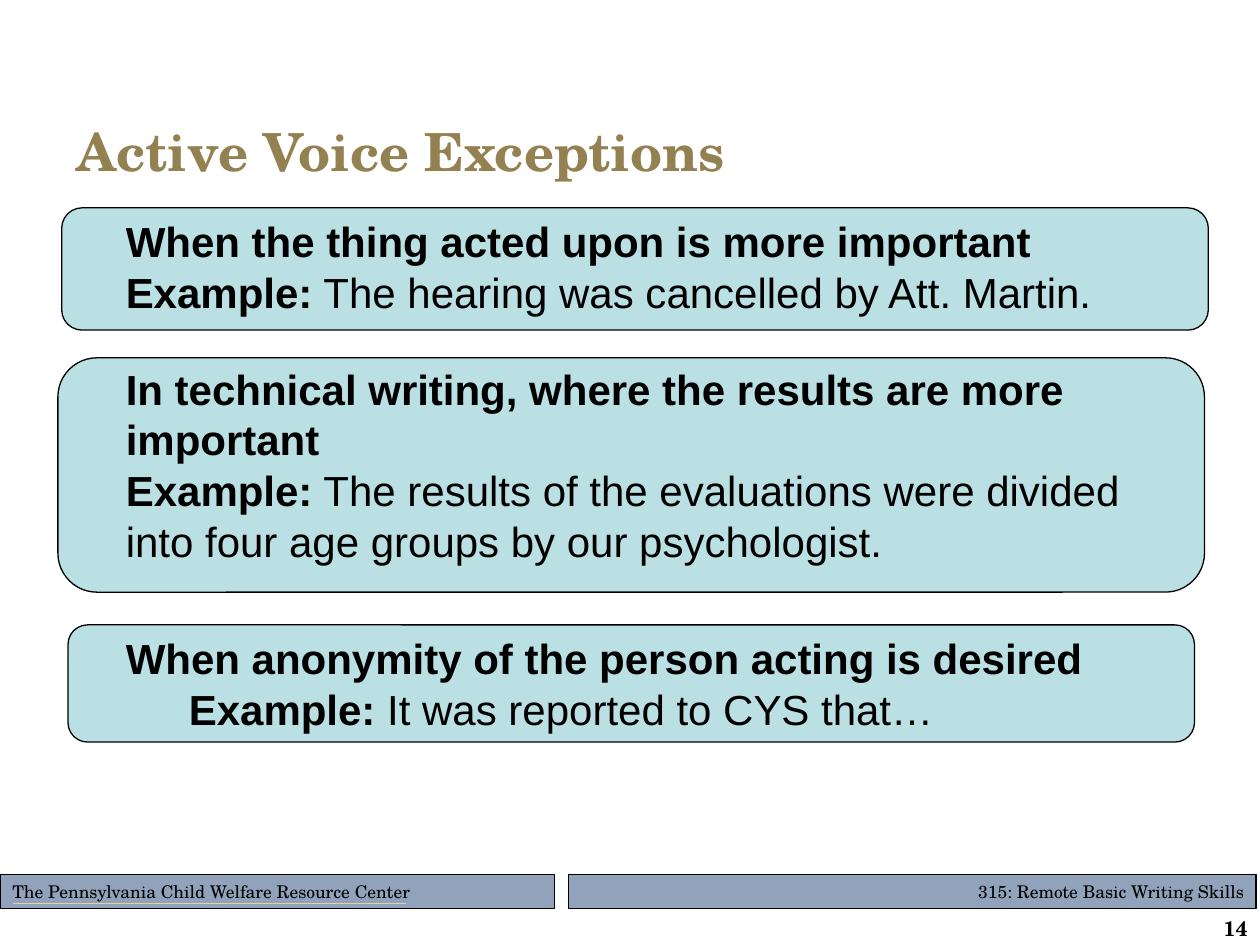
from pptx import Presentation
from pptx.dml.color import RGBColor
from pptx.enum.shapes import MSO_CONNECTOR, MSO_SHAPE
from pptx.enum.text import MSO_ANCHOR, PP_ALIGN
from pptx.oxml.ns import qn
from pptx.util import Inches, Pt
from lxml import etree

SERIF = "TeX Gyre Schola"


def color(hex_string):
    return RGBColor.from_string(hex_string)


def add_run(paragraph, text, size, font, bold=False, ink="000000"):
    run = paragraph.add_run()
    run.text = text
    run.font.size = Pt(size)
    run.font.name = font
    run.font.bold = bold
    run.font.color.rgb = color(ink)


prs = Presentation()
prs.slide_width, prs.slide_height = Inches(10), Inches(7.5)
slide = prs.slides.add_slide(prs.slide_layouts[5])
shapes = slide.shapes

# Footer bars
footers = [
    (4.51, 5.46, 0.75, PP_ALIGN.RIGHT, "315: Remote Basic Writing Skills"),
    (0, 4.4, 0.5, PP_ALIGN.LEFT, "The Pennsylvania Child Welfare Resource Center"),
]
for left, width, border, align, label in footers:
    bar = shapes.add_shape(MSO_SHAPE.RECTANGLE, Inches(left), Inches(6.94),
                           Inches(width), Inches(0.27))
    bar.shadow.inherit = False
    bar.fill.solid()
    bar.fill.fore_color.rgb = color("91A3BB")
    bar.line.color.rgb = color("000000")
    bar.line.width = Pt(border)
    bar.text_frame.vertical_anchor = MSO_ANCHOR.MIDDLE
    bar_line = bar.text_frame.paragraphs[0]
    bar_line.alignment = align
    add_run(bar_line, label, 10, SERIF)

# Rule under the center's name
rule = shapes.add_connector(MSO_CONNECTOR.STRAIGHT, Inches(0.1), Inches(7.17),
                            Inches(3.22), Inches(7.17))
rule.line.color.rgb = color("E5D199")
rule.line.width = Pt(0.75)
etree.SubElement(rule._element.spPr, qn("a:effectLst"))

# Title
title = shapes.title
title.left, title.top = Inches(0.51), Inches(0.87)
title.width, title.height = Inches(9), Inches(0.65)
title.text_frame.vertical_anchor = MSO_ANCHOR.MIDDLE
heading = title.text_frame.paragraphs[0]
heading.alignment = PP_ALIGN.LEFT
add_run(heading, "Active Voice Exceptions", 30, SERIF, True, "948151")

# Page number
page = shapes.add_textbox(Inches(8.89), Inches(7.22), Inches(1.11), Inches(0.26))
page.text_frame.word_wrap = True
page_line = page.text_frame.paragraphs[0]
page_line.alignment = PP_ALIGN.RIGHT
add_run(page_line, "14", 12, SERIF, True)

# Exceptions: card box, text box, example indent, rule, example
exceptions = [
    ((0.49, 1.65, 9.1, 0.97), (0.9, 1.66, 8.33, 1.31), 0,
     "When the thing acted upon is more important",
     " The hearing was cancelled by Att. Martin."),
    ((0.46, 2.84, 9.1, 1.86), (0.9, 2.83, 8.58, 2.12), 0,
     "In technical writing, where the results are more important",
     " The results of the evaluations were divided into four age groups by our psychologist."),
    ((0.54, 4.96, 8.94, 0.93), (0.9, 4.97, 8.88, 1.31), 0.5,
     "When anonymity of the person acting is desired",
     " It was reported to CYS that…"),
]
for card_box, text_box, indent, exception, example in exceptions:
    card = shapes.add_shape(MSO_SHAPE.ROUNDED_RECTANGLE, *map(Inches, card_box))
    card.shadow.inherit = False
    card.fill.solid()
    card.fill.fore_color.rgb = color("BBE0E3")
    card.line.color.rgb = color("000000")
    card.line.width = Pt(0.75)

    frame = shapes.add_textbox(*map(Inches, text_box)).text_frame
    frame.word_wrap = True
    exception_line = frame.paragraphs[0]
    example_line = frame.add_paragraph()
    if indent:
        example_line.level = 1
        example_line._p.get_or_add_pPr().set("marL", str(Inches(indent)))
    for paragraph in (exception_line, example_line):
        paragraph.line_spacing = Pt(29)
    add_run(exception_line, exception, 24, "Arial", True)
    add_run(example_line, "Example:", 24, "Arial", True)
    add_run(example_line, example, 24, "Arial")

prs.save("out.pptx")
